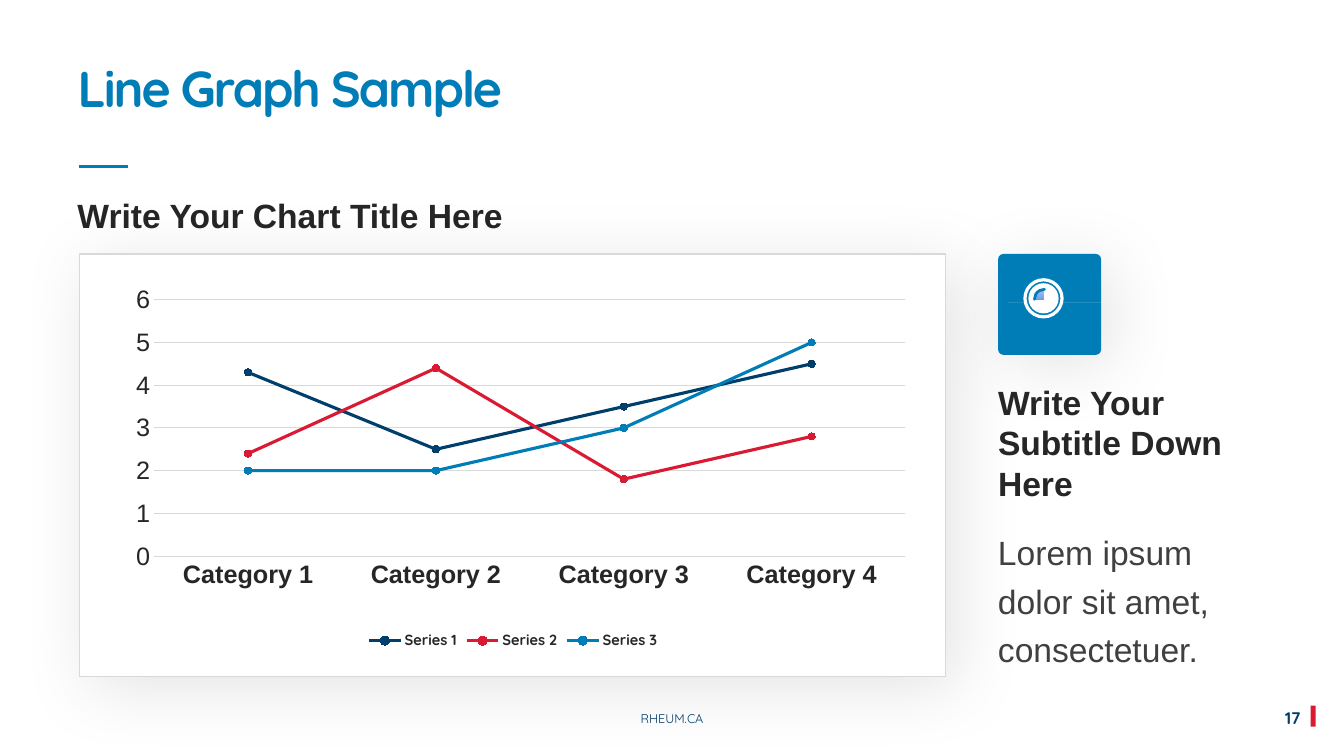
from lxml import etree
from pptx import Presentation
from pptx.chart.data import CategoryChartData
from pptx.dml.color import RGBColor
from pptx.enum.chart import XL_CHART_TYPE as Chart, XL_LEGEND_POSITION as Legend
from pptx.enum.chart import XL_MARKER_STYLE as Marker, XL_TICK_MARK as Tick
from pptx.enum.shapes import MSO_CONNECTOR as Connector, MSO_SHAPE as Shape
from pptx.enum.text import MSO_ANCHOR as Anchor, PP_ALIGN as Align
from pptx.oxml import parse_xml
from pptx.oxml.ns import nsdecls, qn
from pptx.util import Inches, Pt

WIDTH, HEIGHT = 13.33, 7.5
NAVY, RED, BLUE = "003E6B", "DA1A32", "007DB6"
INK, BODY, RULE, WHITE = "262626", "404040", "D9D9D9", "FFFFFF"

CATEGORIES = [f"Category {number}" for number in range(1, 5)]
SERIES = [
    ("Series 1", (4.3, 2.5, 3.5, 4.5), NAVY),
    ("Series 2", (2.4, 4.4, 1.8, 2.8), RED),
    ("Series 3", (2, 2, 3, 5), BLUE),
]


def color(code):
    return RGBColor.from_string(code)


def lengths(*values):
    return [Inches(value) for value in values]


def style_font(font, size, code, name="Arial", bold=False):
    font.size, font.name, font.bold = Pt(size), name, bold
    font.color.rgb = color(code)


def style_line(line, code, width):
    line.color.rgb = color(code)
    line.width = Pt(width)


def write(shape, text, size, code, name="Arial", bold=False, align=Align.LEFT, anchor=Anchor.TOP):
    frame = shape.text_frame
    frame.word_wrap = True
    frame.vertical_anchor = anchor
    para = frame.paragraphs[0]
    para.text, para.alignment = text, align
    style_font(para.font, size, code, name, bold)
    return para


def add_text(page, box, *args, **options):
    return write(page.shapes.add_textbox(*lengths(*box)), *args, **options)


def add_filled(shapes, kind, box, code):
    shape = shapes.add_shape(kind, *lengths(*box))
    shape.shadow.inherit = False
    shape.fill.solid()
    shape.fill.fore_color.rgb = color(code)
    shape.line.fill.background()
    return shape


def add_soft_shadow(shape):
    effects = shape._element.spPr.find(qn("a:effectLst"))
    effects.append(parse_xml(
        f'<a:outerShdw {nsdecls("a")} blurRad="{Pt(50)}" dist="{Pt(10)}" dir="{46 * 60000}" '
        'algn="ctr" rotWithShape="0"><a:srgbClr val="000000"><a:alpha val="11000"/>'
        '</a:srgbClr></a:outerShdw>'))


def add_heading(page, box):
    left, top, width, height = box
    title = page.shapes.title
    title.left, title.top, title.width, title.height = lengths(left, top, width, 0.65)
    para = write(title, "Line Graph Sample", 36, BLUE, "Quicksand", True)
    para.line_spacing = 0.9
    para.runs[0].font._element.set("spc", "-150")
    rule_y = top + height
    rule = page.shapes.add_connector(
        Connector.STRAIGHT, *lengths(left + 0.11, rule_y, left + 0.6, rule_y))
    style_line(rule.line, BLUE, 2.25)
    etree.SubElement(rule._element.spPr, qn("a:effectLst"))


def add_chart_card(page, box):
    left, top, width, height = box
    add_text(page, (left - 0.12, top - 0.64, 4.85, 0.5),
             "Write Your Chart Title Here", 24, INK, bold=True)
    card = add_filled(page.shapes, Shape.RECTANGLE, box, WHITE)
    style_line(card.line, RULE, 1)
    add_soft_shadow(card)
    add_line_chart(page, (left + 0.16, top + 0.23, width - 0.31, height - 0.45))


def add_line_chart(page, box):
    data = CategoryChartData()
    data.categories = CATEGORIES
    for name, values, _ in SERIES:
        data.add_series(name, values)
    chart = page.shapes.add_chart(Chart.LINE_MARKERS, *lengths(*box), data).chart
    chart.has_title = False
    style_font(chart.font, 10, "000000", "Lato")

    for series, (_, _, code) in zip(chart.plots[0].series, SERIES):
        series.smooth = False
        style_line(series.format.line, code, 2.25)
        marker = series.marker
        marker.style, marker.size = Marker.CIRCLE, 5
        marker.format.fill.solid()
        marker.format.fill.fore_color.rgb = color(code)
        marker.format.line.color.rgb = color(code)
    chart.plots[0].vary_by_categories = False

    for axis, bold in ((chart.category_axis, True), (chart.value_axis, False)):
        axis.major_tick_mark = axis.minor_tick_mark = Tick.NONE
        style_font(axis.tick_labels.font, 18, INK, bold=bold)
    style_line(chart.category_axis.format.line, RULE, 0.75)
    values = chart.value_axis
    values.minimum_scale, values.maximum_scale, values.major_unit = 0, 6, 1
    values.format.line.fill.background()
    style_line(values.major_gridlines.format.line, RULE, 0.75)

    chart.has_legend = True
    chart.legend.position = Legend.BOTTOM
    chart.legend.include_in_layout = False
    style_font(chart.legend.font, 10.5, INK, "Quicksand", True)
    set_plot_area(chart, x=0.07, y=0.06, w=0.9, h=0.68)


def set_plot_area(chart, **shares):
    area = chart._chartSpace.chart.plotArea
    for old in area.findall(qn("c:layout")):
        area.remove(old)
    parts = "".join(f'<c:{key} val="{share}"/>' for key, share in shares.items())
    area.insert(0, parse_xml(
        f'<c:layout {nsdecls("c")}><c:manualLayout><c:layoutTarget val="inner"/>'
        f'<c:xMode val="edge"/><c:yMode val="edge"/>{parts}</c:manualLayout></c:layout>'))


def add_search_icon(page, box):
    left, top, _, _ = box
    shapes = page.shapes.add_group_shape().shapes
    tile = add_filled(shapes, Shape.ROUNDED_RECTANGLE, box, BLUE)
    tile.adjustments[0] = 0.05
    add_soft_shadow(tile)
    ring = add_filled(shapes, Shape.DONUT, (left + 0.25, top + 0.24, 0.4, 0.4), WHITE)
    ring.adjustments[0] = 0.08
    add_filled(shapes, Shape.OVAL, (left + 0.3, top + 0.29, 0.3, 0.3), WHITE)
    glint = shapes.add_shape(Shape.ARC, *lengths(left + 0.36, top + 0.35, 0.2, 0.2))
    glint.shadow.inherit = False
    glint.adjustments[0], glint.adjustments[1] = 108, 162
    style_line(glint.line, BLUE, 2)
    glint.line._get_or_add_ln().set("cap", "rnd")

    outline = [(left + x, top + y) for x, y in (
        (0.61, 0.58), (0.58, 0.61), (0.74, 0.77), (0.76, 0.77), (0.77, 0.75), (0.77, 0.73))]
    builder = shapes.build_freeform(*outline[0], scale=Inches(1))
    builder.add_line_segments(outline[1:], close=True)
    handle = builder.convert_to_shape()
    handle.shadow.inherit = False
    handle.fill.solid()
    handle.fill.fore_color.rgb = color(WHITE)
    handle.line.fill.background()


def add_side_note(page, box):
    left, top, width, _ = box
    add_search_icon(page, (left + 0.1, top, 1.02, 1))
    add_text(page, (left, top + 1.22, width, 1.31),
             "Write Your Subtitle Down Here", 24, INK, bold=True)
    para = add_text(page, (left, top + 2.63, width - 0.12, 1.51),
                    "Lorem ipsum dolor sit amet, consectetuer.", 24, BODY)
    para.line_spacing = 1.2
    para.space_after = Pt(6)


def add_footer(page, box):
    left, top, width, height = box
    add_text(page, (left + (width - 1.43) / 2, top, 1.43, 0.25),
             "RHEUM.CA", 9, NAVY, "Quicksand", align=Align.CENTER)
    add_text(page, (12.16, top - 0.03, 0.84, 0.3), "17", 12, NAVY, "Quicksand", True,
             align=Align.RIGHT, anchor=Anchor.MIDDLE)
    add_filled(page.shapes, Shape.RECTANGLE, (13, top, 0.05, height), RED)


def main():
    deck = Presentation()
    deck.slide_width, deck.slide_height = lengths(WIDTH, HEIGHT)
    page = deck.slides.add_slide(deck.slide_layouts.get_by_name("Title Only"))
    add_footer(page, (0, 7, WIDTH, 0.21))
    add_heading(page, (0.67, 0.58, 7.98, 1.07))
    add_chart_card(page, (0.79, 2.52, 8.59, 4.19))
    add_side_note(page, (9.8, 2.52, 2.98, 4.19))
    deck.save("out.pptx")


if __name__ == "__main__":
    main()
